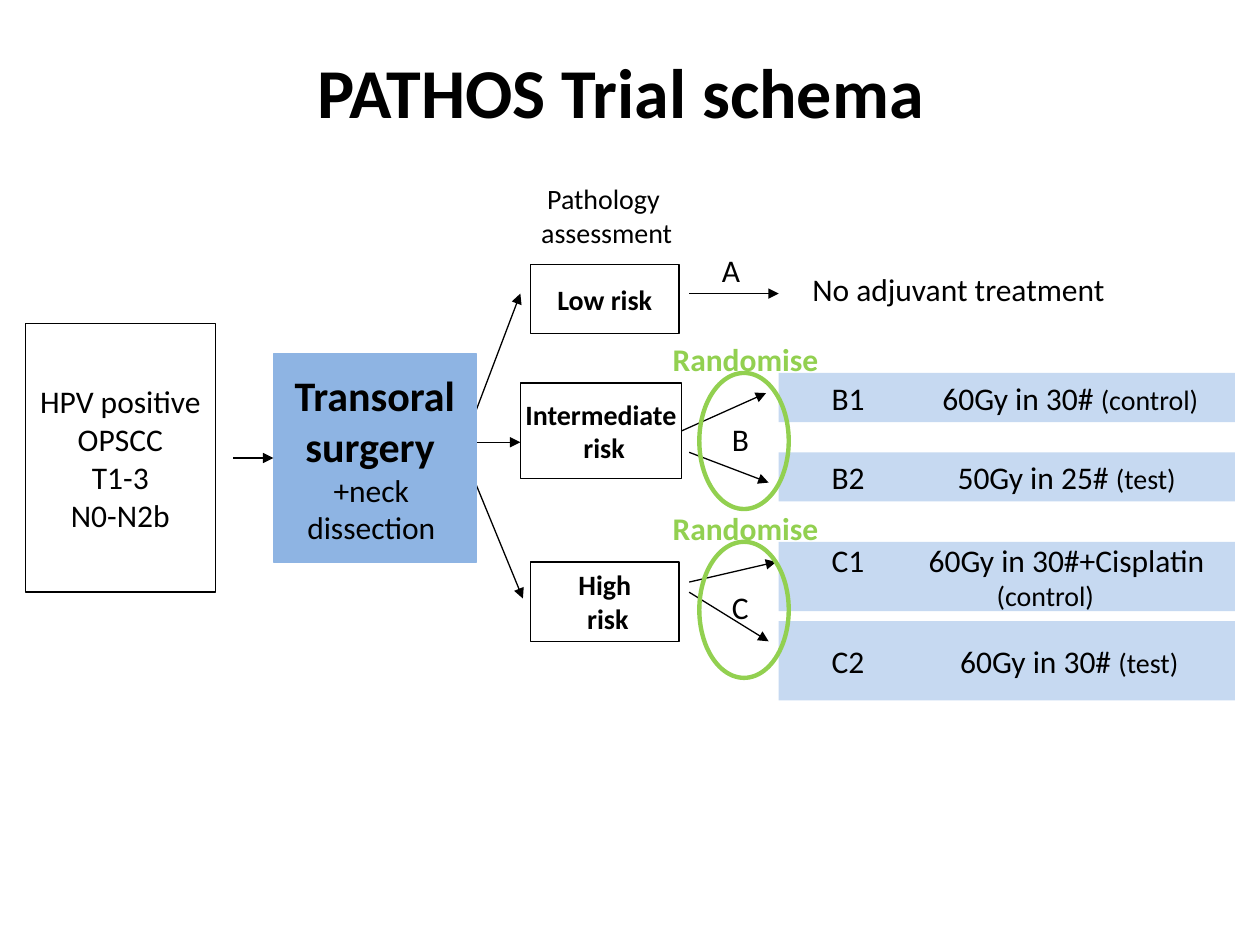
from dataclasses import dataclass

from lxml.etree import SubElement
from pptx import Presentation
from pptx.dml.color import RGBColor
from pptx.enum.shapes import MSO_CONNECTOR, MSO_SHAPE
from pptx.enum.text import MSO_ANCHOR, MSO_AUTO_SIZE, PP_ALIGN
from pptx.oxml.ns import qn
from pptx.util import Inches, Pt


@dataclass(frozen=True)
class Theme:
    font: str = "Calibri"
    ink: str = "000000"
    paper: str = "FFFFFF"
    surgery: str = "8EB4E3"
    arm: str = "C6D9F1"
    random: str = "92D050"
    title: int = 40
    heading: int = 24
    body: int = 18
    small: int = 16
    thin: float = 0.75
    thick: float = 2.5


THEME = Theme()
LEFT, RIGHT = 1, 3


def grid(*cells):
    return [Inches(cell / 10) for cell in cells]


def write(frame, lines, size=THEME.body, bold=False, color=THEME.ink,
          align=PP_ALIGN.CENTER, anchor=MSO_ANCHOR.MIDDLE, inset=0, wrap=False):
    frame.auto_size = MSO_AUTO_SIZE.NONE
    frame.word_wrap = wrap
    frame.vertical_anchor = anchor
    frame.margin_left, frame.margin_right = grid(inset, 0)
    frame.margin_top = frame.margin_bottom = 0
    for index, line in enumerate(lines):
        paragraph = frame.add_paragraph() if index else frame.paragraphs[0]
        paragraph.alignment = align
        for part in [line] if isinstance(line, str) else line:
            text, part_size, part_bold = (part, size, bold) if isinstance(part, str) else part
            run = paragraph.add_run()
            run.text = text
            run.font.name = THEME.font
            run.font.size = Pt(part_size)
            run.font.bold = part_bold
            run.font.color.rgb = RGBColor.from_string(color)


class Schema:
    """Draws trial diagram elements on a slide of 100 by 75 grid cells."""

    def __init__(self, deck, theme):
        self.theme = theme
        self.slide = deck.slides.add_slide(deck.slide_layouts[5])
        self.shapes = self.slide.shapes

    def title(self, text, *place):
        heading = self.shapes.title
        heading.left, heading.top, heading.width, heading.height = grid(*place)
        write(heading.text_frame, [text], size=self.theme.title, bold=True,
              align=PP_ALIGN.LEFT, inset=1)

    def figure(self, preset, place, fill=None, line=None, width=THEME.thin):
        figure = self.shapes.add_shape(preset, *grid(*place))
        figure.shadow.inherit = False
        if fill:
            figure.fill.solid()
            figure.fill.fore_color.rgb = RGBColor.from_string(fill)
        else:
            figure.fill.background()
        if line:
            figure.line.color.rgb = RGBColor.from_string(line)
            figure.line.width = Pt(width)
        else:
            figure.line.fill.background()
        return figure

    def box(self, lines, place, fill=THEME.paper, line=THEME.ink, **format):
        box = self.figure(MSO_SHAPE.RECTANGLE, place, fill, line)
        write(box.text_frame, lines, **format)
        return box

    def label(self, lines, place, **format):
        label = self.shapes.add_textbox(*grid(*place))
        write(label.text_frame, lines, **format)

    def arrow(self, start, end, source=None, target=None):
        arrow = self.shapes.add_connector(MSO_CONNECTOR.STRAIGHT, *grid(*start, *end))
        if source:
            arrow.begin_connect(source, RIGHT)
        if target:
            arrow.end_connect(target, LEFT)
        arrow.line.color.rgb = RGBColor.from_string(self.theme.ink)
        arrow.line.width = Pt(self.theme.thin)
        SubElement(arrow.line._get_or_add_ln(), qn("a:tailEnd"), type="triangle")
        SubElement(arrow._element.spPr, qn("a:effectLst"))

    def arm(self, name, dose, role, top, height, tab, role_indent=None):
        opening = [f"{name}\t{dose} "]
        note = (role, self.theme.small, False)
        lines = [opening, [note]] if role_indent else [opening + [note]]
        arm = self.box(lines, (61.8, top, 36.2, height), self.theme.arm, None,
                       align=PP_ALIGN.LEFT, inset=4.2, wrap=True)
        paragraphs = arm.text_frame.paragraphs
        stops = SubElement(paragraphs[0]._p.get_or_add_pPr(), qn("a:tabLst"))
        SubElement(stops, qn("a:tab"), pos=str(Inches(tab / 10)), algn="l")
        if role_indent:
            paragraphs[1]._p.get_or_add_pPr().set("marL", str(Inches(role_indent / 10)))

    def randomise(self, letter, top):
        self.label([letter], (57.1, top + 3.2, 3.4, 4), align=PP_ALIGN.LEFT, inset=1)
        self.figure(MSO_SHAPE.OVAL, (55.5, top, 7.1, 10.8),
                    line=self.theme.random, width=self.theme.thick)
        self.label(["Randomise"], (52.4, top - 3.1, 13.7, 4), bold=True,
                   color=self.theme.random, align=PP_ALIGN.LEFT, inset=1)


def main():
    deck = Presentation()
    deck.slide_width, deck.slide_height = grid(100, 75)
    schema = Schema(deck, THEME)
    schema.title("PATHOS Trial schema", 24.2, 3.3, 73.8, 7.7)

    patients = schema.box(["HPV positive", "OPSCC", "T1-3", "N0-N2b"], (2, 25.7, 15.1, 21.3))
    for end, start in (((41.3, 23.3), (37.4, 33.6)),
                       ((41.3, 35.1), (37.4, 35.1)),
                       ((41.5, 47.5), (37.6, 38))):
        schema.arrow(start, end)
    surgery = schema.box(
        [[("Transoral", THEME.heading, True)], [("surgery ", THEME.heading, True)],
         "+neck ", "dissection "],
        (21.7, 28.1, 16.1, 16.5), THEME.surgery, THEME.surgery)
    schema.arrow((18.5, 36.35), (21.7, 36.35), target=surgery)

    schema.label(["Pathology", " assessment"], (41.3, 13.9, 13.2, 6.4), size=THEME.small)
    risk = {"size": THEME.small, "bold": True}
    schema.box(["Low risk"], (42.1, 21, 11.8, 5.5), **risk)
    intermediate = schema.box(["Intermediate", " risk"], (41.3, 30.4, 12.8, 7.6), **risk)
    schema.box(["High", " risk"], (42.1, 44.6, 11.8, 6.3), **risk)

    schema.box(["No adjuvant treatment "], (61, 21, 30.7, 3.9), line=None)
    schema.label(["A"], (56.3, 19.4, 3.5, 4), align=PP_ALIGN.LEFT, inset=1)
    schema.arm("B1", "60Gy in 30#", "(control)", 29.6, 3.9, tab=8.8)
    schema.arm("B2", "50Gy in 25#", "(test)", 35.9, 3.9, tab=10)
    schema.arm("C1", "60Gy in 30#+Cisplatin", "(control)", 43, 5.5, tab=7.7, role_indent=13.1)
    schema.arm("C2", "60Gy in 30#", "(test)", 49.3, 6.3, tab=10.2)

    schema.arrow((54.1, 34.2), (60.8, 31.2), source=intermediate)
    for start, end in (((54.7, 23.3), (61.8, 23.3)),
                       ((54.7, 35.9), (61, 38.3)),
                       ((54.7, 46.2), (61.6, 44.6)),
                       ((54.7, 47), (61, 50.9))):
        schema.arrow(start, end)
    for letter, top in (("B", 29.6), ("C", 43)):
        schema.randomise(letter, top)

    deck.save("out.pptx")


if __name__ == "__main__":
    main()
